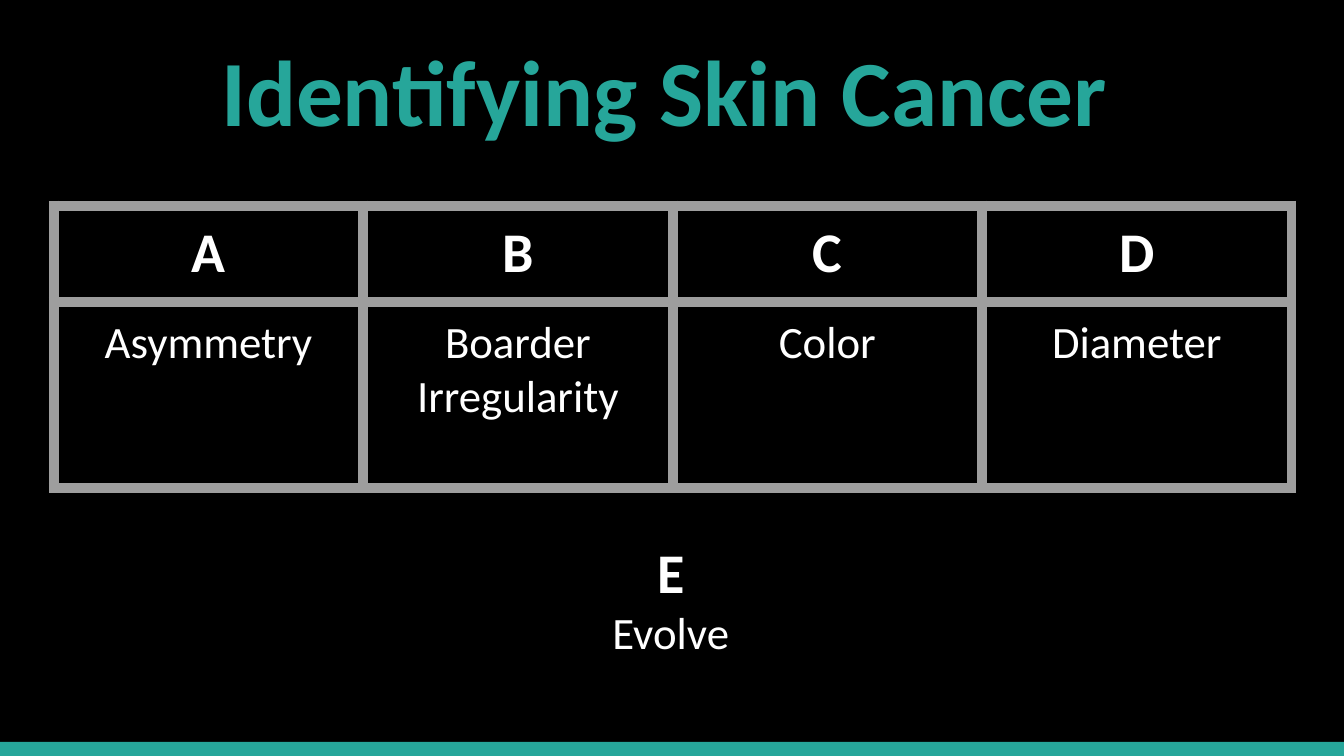
"""Build a slide on the ABCDE signs of skin cancer."""
from lxml import etree
from pptx import Presentation
from pptx.dml.color import RGBColor
from pptx.enum.shapes import MSO_SHAPE
from pptx.enum.text import MSO_ANCHOR, MSO_AUTO_SIZE, PP_ALIGN
from pptx.oxml.ns import qn
from pptx.util import Inches, Pt

RECT = MSO_SHAPE.RECTANGLE
CENTER = PP_ALIGN.CENTER
TOP, MIDDLE = MSO_ANCHOR.TOP, MSO_ANCHOR.MIDDLE
FIXED = MSO_AUTO_SIZE.NONE
TEAL, WHITE, BLACK, GRAY = "26A69A", "FFFFFF", "000000", "9E9E9E"
HEAD = {"size": 30, "bold": True}
BODY = {"size": 24, "bold": False}


def rgb(color):
    return RGBColor.from_string(color)


def write(para, text, size, bold, color=WHITE, space=1.0):
    para.alignment = CENTER
    para.line_spacing = space
    run = para.add_run()
    run.text = text
    run.font.name = "Calibri"
    run.font.size = Pt(size)
    run.font.bold = bold
    run.font.color.rgb = rgb(color)


deck = Presentation()
deck.slide_width = Inches(10)
deck.slide_height = Inches(10) * 9 // 16
slide = deck.slides.add_slide(deck.slide_layouts[5])
slide.background.fill.solid()
slide.background.fill.fore_color.rgb = rgb(BLACK)

bar = slide.shapes.add_shape(RECT, 0, Inches(5.52), Inches(10), Inches(0.11))
bar.shadow.inherit = False
bar.fill.solid()
bar.fill.fore_color.rgb = rgb(TEAL)
bar.line.fill.background()

title = slide.shapes.title
title.left, title.top = Inches(0.15), Inches(0.13)
title.width, title.height = Inches(9.59), Inches(1.21)
write(title.text_frame.paragraphs[0], "Identifying Skin Cancer", size=50, bold=True, color=TEAL, space=0.83)

signs = [
    ("A", ["Asymmetry"]),
    ("B", ["Boarder", "Irregularity"]),
    ("C", ["Color"]),
    ("D", ["Diameter"]),
]
frame = slide.shapes.add_table(2, len(signs), Inches(0.4), Inches(1.53), Inches(9.21), Inches(2.1))
table = frame.table
table.rows[0].height, table.rows[1].height = Inches(0.72), Inches(1.38)

for col, (mark, lines) in enumerate(signs):
    for row, (texts, style) in enumerate([([mark], HEAD), (lines, BODY)]):
        cell = table.cell(row, col)
        cell.margin_left = cell.margin_right = Inches(0.1)
        cell.margin_top = cell.margin_bottom = Inches(0.1)
        cell.vertical_anchor = TOP
        for num, text in enumerate(texts):
            body = cell.text_frame
            write(body.add_paragraph() if num else body.paragraphs[0], text, **style)
        props = cell._tc.get_or_add_tcPr()
        for side in ("a:lnL", "a:lnR", "a:lnT", "a:lnB"):
            edge = etree.SubElement(props, qn(side), w=str(Pt(6)))
            fill = etree.SubElement(edge, qn("a:solidFill"))
            etree.SubElement(fill, qn("a:srgbClr"), val=GRAY)
        cell.fill.solid()
        cell.fill.fore_color.rgb = rgb(BLACK)

note = slide.shapes.add_textbox(Inches(3.25), Inches(3.9), Inches(3.48), Inches(1.21))
write(note.text_frame.paragraphs[0], "E", **HEAD)
write(note.text_frame.add_paragraph(), "Evolve", **BODY)

for box, anchor in ((title, MIDDLE), (note, TOP)):
    body = box.text_frame
    body.word_wrap = True
    body.auto_size = FIXED
    body.vertical_anchor = anchor
    body.margin_left = body.margin_right = Inches(0.1)
    body.margin_top = body.margin_bottom = Inches(0.1)

deck.save("out.pptx")
